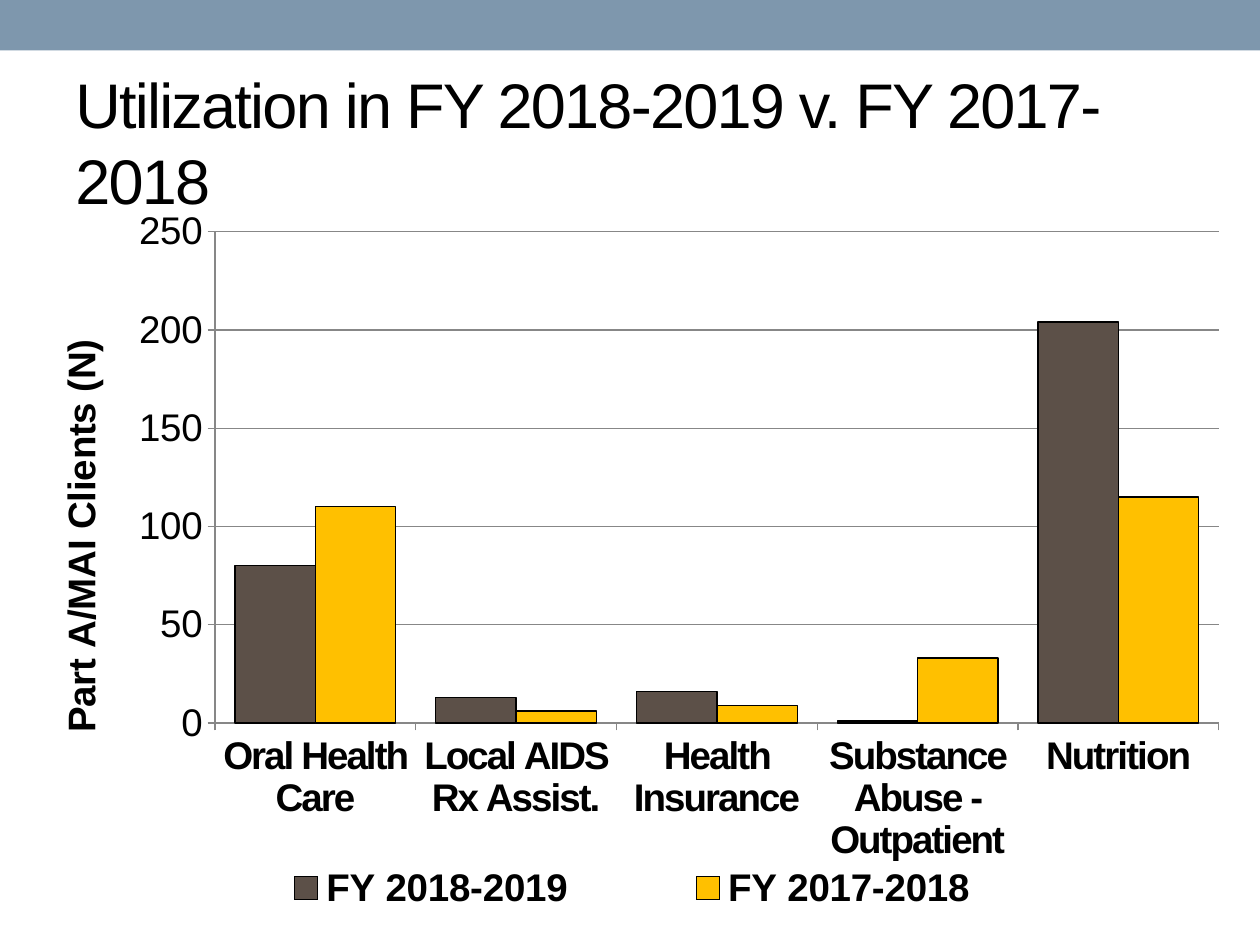
from lxml.etree import SubElement
from pptx import Presentation
from pptx.chart.data import CategoryChartData
from pptx.dml.color import RGBColor
from pptx.enum.chart import XL_CHART_TYPE, XL_LEGEND_POSITION, XL_TICK_MARK
from pptx.enum.shapes import MSO_SHAPE
from pptx.enum.text import MSO_ANCHOR
from pptx.oxml.ns import qn
from pptx.util import Pt

EMU_PER_PX = 9144
BLACK = RGBColor(0x00, 0x00, 0x00)
GRAY = RGBColor(0x87, 0x87, 0x87)
BLUE_GRAY = RGBColor(0x7E, 0x97, 0xAD)
BROWN = RGBColor(0x5C, 0x50, 0x48)
GOLD = RGBColor(0xFF, 0xC0, 0x00)

CATEGORIES = ["Oral Health Care", "Local AIDS Rx Assist.", "Health Insurance",
              "Substance Abuse - Outpatient", "Nutrition"]
SERIES = [("FY 2018-2019", (80, 13, 16, 1, 204), BROWN),
          ("FY 2017-2018", (110, 6, 9, 33, 115), GOLD)]


def px(*lengths):
    return [length * EMU_PER_PX for length in lengths]


class SlideBuilder:
    font_name = "Arial"
    title_size = 36
    chart_size = 22
    tight_spacing = "-100"

    def __init__(self, slide):
        self.slide = slide

    def style_font(self, font, size, bold=False):
        font.name = self.font_name
        font.size = Pt(size)
        font.bold = bold
        font.color.rgb = BLACK

    def band(self, left, top, width, height, color):
        shape = self.slide.shapes.add_shape(
            MSO_SHAPE.RECTANGLE, *px(left, top, width, height))
        shape.shadow.inherit = False
        shape.fill.solid()
        shape.fill.fore_color.rgb = color
        shape.line.fill.background()

    def title(self, left, top, width, height, text):
        shape = self.slide.shapes.add_textbox(*px(left, top, width, height))
        frame = shape.text_frame
        frame.word_wrap = True
        frame.vertical_anchor = MSO_ANCHOR.MIDDLE
        run = frame.paragraphs[0].add_run()
        run.text = text
        self.style_font(run.font, self.title_size)
        run.font._element.set("spc", self.tight_spacing)

    def column_chart(self, left, top, width, height, categories, series_rows):
        data = CategoryChartData(number_format="#,##0")
        data.categories = categories
        for name, values, _ in series_rows:
            data.add_series(name, values)
        chart = self.slide.shapes.add_chart(
            XL_CHART_TYPE.COLUMN_CLUSTERED, *px(left, top, width, height), data).chart
        chart.has_title = False
        self.style_font(chart.font, self.chart_size)

        plot = chart.plots[0]
        plot.gap_width = 50
        plot.overlap = 0
        plot.vary_by_categories = False
        for series, (_, _, color) in zip(plot.series, series_rows):
            series.format.fill.solid()
            series.format.fill.fore_color.rgb = color
            series.format.line.color.rgb = BLACK
            series.format.line.width = Pt(0.75)
        return chart

    def axes(self, chart, value_title, maximum, step):
        for axis in (chart.category_axis, chart.value_axis):
            axis.major_tick_mark = XL_TICK_MARK.OUTSIDE
            axis.minor_tick_mark = XL_TICK_MARK.NONE
            axis.format.line.color.rgb = GRAY
        category_font = chart.category_axis.tick_labels.font
        self.style_font(category_font, self.chart_size, bold=True)
        category_font._element.set("spc", self.tight_spacing)

        axis = chart.value_axis
        self.style_font(axis.tick_labels.font, self.chart_size)
        axis.tick_labels.number_format = "#,##0"
        axis.tick_labels.number_format_is_linked = False
        axis.minimum_scale = 0
        axis.maximum_scale = maximum
        axis.major_unit = step
        axis.has_major_gridlines = True
        axis.major_gridlines.format.line.color.rgb = GRAY
        run = axis.axis_title.text_frame.paragraphs[0].add_run()
        run.text = value_title
        self.style_font(run.font, self.chart_size, bold=True)

    def legend(self, chart):
        chart.has_legend = True
        chart.legend.position = XL_LEGEND_POSITION.BOTTOM
        chart.legend.include_in_layout = False
        self.style_font(chart.legend.font, self.chart_size, bold=True)

    def place(self, element, x, y, width, height, inner=False):
        layout = element.find(qn("c:layout"))
        if layout is None:
            layout = SubElement(element, qn("c:layout"))
            element.remove(layout)
            before = element.find(qn("c:legendPos"))
            element.insert(0 if before is None else element.index(before) + 1, layout)
        manual = SubElement(layout, qn("c:manualLayout"))
        settings = [("layoutTarget", "inner")] if inner else []
        settings += [("xMode", "edge"), ("yMode", "edge"),
                     ("x", x), ("y", y), ("w", width), ("h", height)]
        for tag, value in settings:
            SubElement(manual, qn(f"c:{tag}")).set("val", str(value))


def main():
    presentation = Presentation()
    presentation.slide_width, presentation.slide_height = px(1000, 750)
    slide = presentation.slides.add_slide(presentation.slide_layouts[6])
    builder = SlideBuilder(slide)
    builder.band(0, 0, 1000, 40, BLUE_GRAY)
    builder.title(50, 58, 900, 108, "Utilization in FY 2018-2019 v. FY 2017-2018")
    chart = builder.column_chart(17, 167, 960, 565, CATEGORIES, SERIES)
    builder.axes(chart, "Part A/MAI Clients (N)", maximum=250, step=50)
    builder.legend(chart)
    plot_area = chart._chartSpace.chart.plotArea
    builder.place(plot_area, 0.16, 0.03, 0.83, 0.69, inner=True)
    builder.place(chart.legend._element, 0.13, 0.92, 0.75, 0.07)
    presentation.save("out.pptx")


if __name__ == "__main__":
    main()
